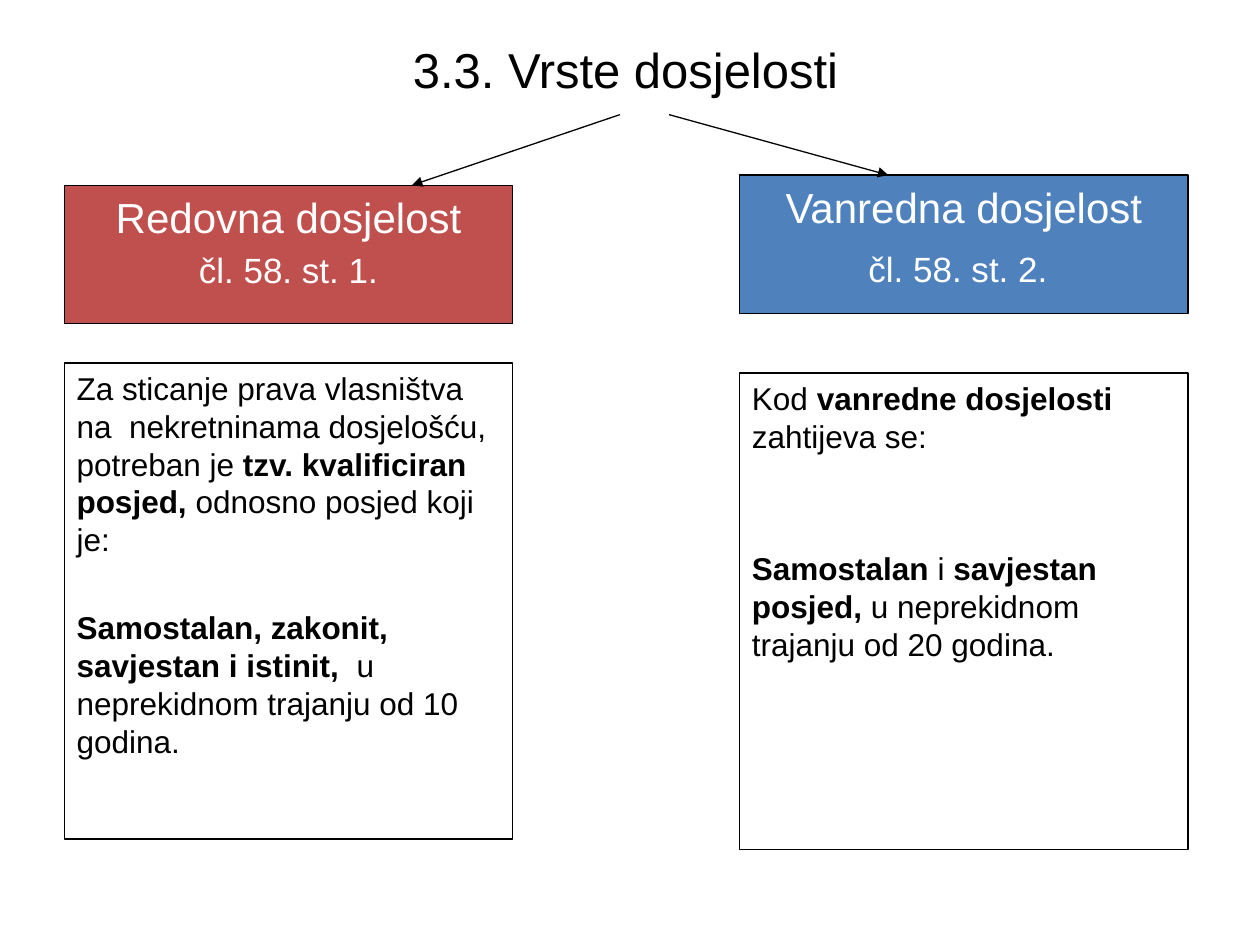
from lxml import etree
from pptx import Presentation
from pptx.dml import color
from pptx.enum import shapes, text
from pptx.oxml import ns
from pptx.util import Inches, Pt

COLUMN_W, HEADER_H, CONDITIONS_H = 3.56, 1.1, 3.78
LEFT_X, RIGHT_X = 0.51, 5.87


def rgb(value):
    return color.RGBColor.from_string(value)


def place(part, x, y, w, h):
    part.left, part.top, part.width, part.height = map(Inches, (x, y, w, h))


def add_box(slide):
    box = slide.shapes.add_shape(shapes.MSO_SHAPE.RECTANGLE, 0, 0, 0, 0)
    box.shadow.inherit = False
    return box


def style_box(box, fill):
    box.fill.solid()
    box.fill.fore_color.rgb = rgb(fill)
    box.line.color.rgb = rgb("000000")
    box.line.width = Pt(0.75)
    frame = box.text_frame
    frame.word_wrap = True
    frame.auto_size = text.MSO_AUTO_SIZE.NONE
    frame.vertical_anchor = text.MSO_ANCHOR.TOP


def write_paragraph(paragraph, runs, ink, align, before=0):
    properties = paragraph._p.get_or_add_pPr()
    properties.set("marL", "0")
    properties.set("indent", "0")
    etree.SubElement(properties, ns.qn("a:buNone"))
    paragraph.alignment = align
    paragraph.space_before = Pt(before)
    for words, size, bold in runs:
        run = paragraph.add_run()
        run.text = words
        run.font.name = "Arial"
        run.font.size = Pt(size)
        run.font.bold = bold
        run.font.color.rgb = rgb(ink)


def build_title(title, x, y, w, h):
    place(title, x, y, w, h)
    title.text_frame.vertical_anchor = text.MSO_ANCHOR.MIDDLE
    title.text_frame.auto_size = text.MSO_AUTO_SIZE.NONE
    runs = [("3.3. Vrste dosjelosti", 28, False), (" ", 24, False)]
    write_paragraph(title.text_frame.paragraphs[0], runs, "000000", text.PP_ALIGN.CENTER)


def build_header(header, x, y, fill, kind, article_runs, before):
    place(header, x, y, COLUMN_W, HEADER_H)
    style_box(header, fill)
    frame = header.text_frame
    center = text.PP_ALIGN.CENTER
    write_paragraph(frame.paragraphs[0], [(kind, 24, False)], "FFFFFF", center)
    write_paragraph(frame.add_paragraph(), article_runs, "FFFFFF", center, before)


def build_conditions(slide, x, y, intro, requirement, gap):
    conditions = add_box(slide)
    place(conditions, x, y, COLUMN_W, CONDITIONS_H)
    style_box(conditions, "FFFFFF")
    frame = conditions.text_frame
    for paragraph, parts, before in (
        (frame.paragraphs[0], intro, 0),
        (frame.add_paragraph(), requirement, gap),
    ):
        runs = [(words, 18, bold) for words, bold in parts]
        write_paragraph(paragraph, runs, "000000", text.PP_ALIGN.LEFT, before)


def build_arrow(slide, start, end):
    arrow = slide.shapes.add_connector(
        shapes.MSO_CONNECTOR.STRAIGHT, *map(Inches, (*start, *end)))
    arrow.line.color.rgb = rgb("000000")
    arrow.line.width = Pt(0.75)
    etree.SubElement(arrow.line._get_or_add_ln(), ns.qn("a:tailEnd"), type="triangle")
    etree.SubElement(arrow._element.spPr, ns.qn("a:effectLst"))


def main():
    deck = Presentation()
    deck.slide_width, deck.slide_height = Inches(10), Inches(7.5)
    slide = deck.slides.add_slide(deck.slide_layouts[1])
    build_title(slide.shapes.title, LEFT_X, 0.28, 9, 0.54)

    build_header(slide.placeholders[1], LEFT_X, 1.47, "C0504D", "Redovna dosjelost",
                 [("čl. 58. st. 1.", 20, False)], 4)
    build_header(add_box(slide), RIGHT_X, 1.39, "4F81BD", "Vanredna dosjelost",
                 [("čl. 58. st. 2.", 20, False), (" ", 24, False)], 4.8)
    build_arrow(slide, (4.92, 0.91), (3.27, 1.47))
    build_arrow(slide, (5.31, 0.91), (7.05, 1.39))

    build_conditions(
        slide, LEFT_X, 2.88,
        [("Za sticanje prava vlasništva na  nekretninama dosjelošću, potreban je ", False),
         ("tzv. kvalificiran posjed,", True),
         (" odnosno posjed koji je:", False)],
        [("Samostalan, zakonit, savjestan i istinit,  ", True),
         ("u neprekidnom trajanju od 10 godina.", False)],
        28.8)
    build_conditions(
        slide, RIGHT_X, 2.96,
        [("Kod ", False), ("vanredne dosjelosti", True), (" zahtijeva se:", False)],
        [("Samostalan", True), (" i ", False), ("savjestan posjed, ", True),
         ("u neprekidnom trajanju od 20 godina.", False)],
        54)
    deck.save("out.pptx")


if __name__ == "__main__":
    main()
